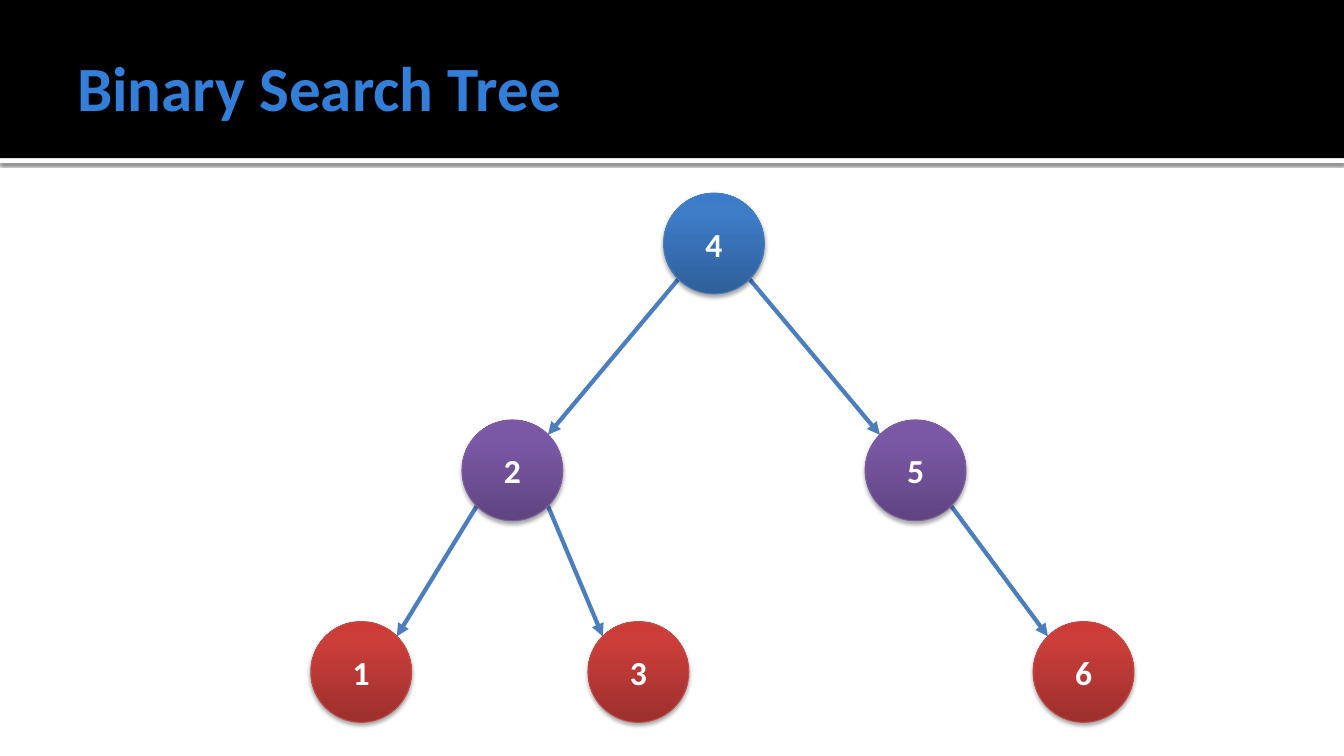
from dataclasses import dataclass
from math import sqrt

from lxml.etree import SubElement
from pptx import Presentation
from pptx.dml.color import RGBColor
from pptx.enum.shapes import MSO_CONNECTOR as Connector, MSO_SHAPE as Preset
from pptx.enum.text import MSO_ANCHOR as Anchor, PP_ALIGN as Align
from pptx.oxml.ns import qn
from pptx.util import Pt

DIAMETER = 72
DIAGONAL = DIAMETER / 2 / sqrt(2)
EDGE_COLOUR = "4B7EBC"


@dataclass(frozen=True)
class Level:
    dark: str
    middle: str
    light: str
    outline: str


@dataclass(frozen=True)
class Node:
    key: str
    left: float
    top: float
    level: Level

    @property
    def centre(self) -> tuple[float, float]:
        return self.left + DIAMETER / 2, self.top + DIAMETER / 2


ROOT = Level("2F5F99", "3D7CC7", "3A7CCB", EDGE_COLOUR)
INNER = Level("5F4480", "7B58A6", "7C57A8", "7D60A0")
LEAF = Level("9C2F2D", "CB3E3A", "CE3B37", "BF4C48")

NODES = {node.key: node for node in (
    Node("4", 474, 138, ROOT),
    Node("2", 330, 300, INNER),
    Node("5", 618, 300, INNER),
    Node("1", 222, 444, LEAF),
    Node("3", 420, 444, LEAF),
    Node("6", 738, 444, LEAF),
)}
EDGES = ("42", "21", "23", "45", "56")


def rgb(value: str) -> RGBColor:
    return RGBColor.from_string(value)


def format_text(paragraph, align, size: float, colour: str) -> None:
    paragraph.alignment = align
    font = paragraph.font
    for name, value in {"name": "Calibri", "size": Pt(size), "bold": True}.items():
        setattr(font, name, value)
    font.color.rgb = rgb(colour)


def add_shadow(shape, opacity: int, blur: float, distance: float) -> None:
    """Give the shape a black shadow that falls straight down."""
    shape.shadow.inherit = False
    effects = shape.element.spPr.find(qn("a:effectLst"))
    shadow = SubElement(effects, qn("a:outerShdw"), blurRad=str(Pt(blur)),
                        dist=str(Pt(distance)), dir="5400000", rotWithShape="0")
    black = SubElement(shadow, qn("a:srgbClr"), val="000000")
    SubElement(black, qn("a:alpha"), val=str(opacity * 1000))


def add_band(shapes, top: float, height: float, colour: str):
    band = shapes.add_shape(Preset.RECTANGLE, 0, Pt(top), Pt(960), Pt(height))
    band.shadow.inherit = False
    band.fill.solid()
    band.fill.fore_color.rgb = rgb(colour)
    band.line.fill.background()
    return band


def add_title(shapes, wording: str) -> None:
    title = shapes.title
    shapes.element.append(title.element)  # in front of the bands
    box = {"left": 48, "top": 12, "width": 864, "height": 99}
    for name, value in box.items():
        setattr(title, name, Pt(value))
    frame = title.text_frame
    frame.text = wording
    frame.vertical_anchor = Anchor.MIDDLE
    frame.margin_right = Pt(3.6)
    format_text(frame.paragraphs[0], Align.LEFT, 45, "337ED9")


def add_edge(shapes, parent: Node, child: Node) -> None:
    """Draw an arrow between the diagonal points of two circles."""
    (x1, y1), (x2, y2) = parent.centre, child.centre
    shift = DIAGONAL if x2 > x1 else -DIAGONAL
    ends = (x1 + shift, y1 + DIAGONAL, x2 - shift, y2 - DIAGONAL)
    edge = shapes.add_connector(Connector.STRAIGHT, *map(Pt, ends))
    edge.line.width = Pt(3)
    edge.line.color.rgb = rgb(EDGE_COLOUR)
    SubElement(edge.line._get_or_add_ln(), qn("a:tailEnd"), type="triangle")
    SubElement(edge.element.spPr, qn("a:effectLst"))


def add_node(shapes, node: Node) -> None:
    circle = shapes.add_shape(Preset.OVAL, Pt(node.left), Pt(node.top),
                              Pt(DIAMETER), Pt(DIAMETER))
    level = node.level
    circle.fill.gradient()
    circle.fill.gradient_angle = 90
    stops = circle.element.spPr.find(".//" + qn("a:gsLst"))
    stops.clear()
    for percent, colour in ((0, level.dark), (80, level.middle), (100, level.light)):
        stop = SubElement(stops, qn("a:gs"), pos=str(percent * 1000))
        SubElement(stop, qn("a:srgbClr"), val=colour)
    circle.line.width = Pt(0.75)
    circle.line.color.rgb = rgb(level.outline)
    add_shadow(circle, 35, 3.1, 1.8)
    frame = circle.text_frame
    frame.text = node.key
    frame.vertical_anchor = Anchor.MIDDLE
    format_text(frame.paragraphs[0], Align.CENTER, 24, "FFFFFF")


def main() -> None:
    deck = Presentation()
    deck.slide_width, deck.slide_height = Pt(960), Pt(540)
    slide = deck.slides.add_slide(deck.slide_layouts.get_by_name("Title Only"))
    slide.background.fill.solid()
    slide.background.fill.fore_color.rgb = rgb("FFFFFF")
    shapes = slide.shapes
    rule = add_band(shapes, 113, 3.6, "FFFFFF")
    add_shadow(rule, 60, 2.5, 0.8)
    add_band(shapes, 0, 113, "000000")
    add_title(shapes, "Binary Search Tree")
    for parent, child in EDGES:
        add_edge(shapes, NODES[parent], NODES[child])
    for node in NODES.values():
        add_node(shapes, node)
    deck.save("out.pptx")


if __name__ == "__main__":
    main()
